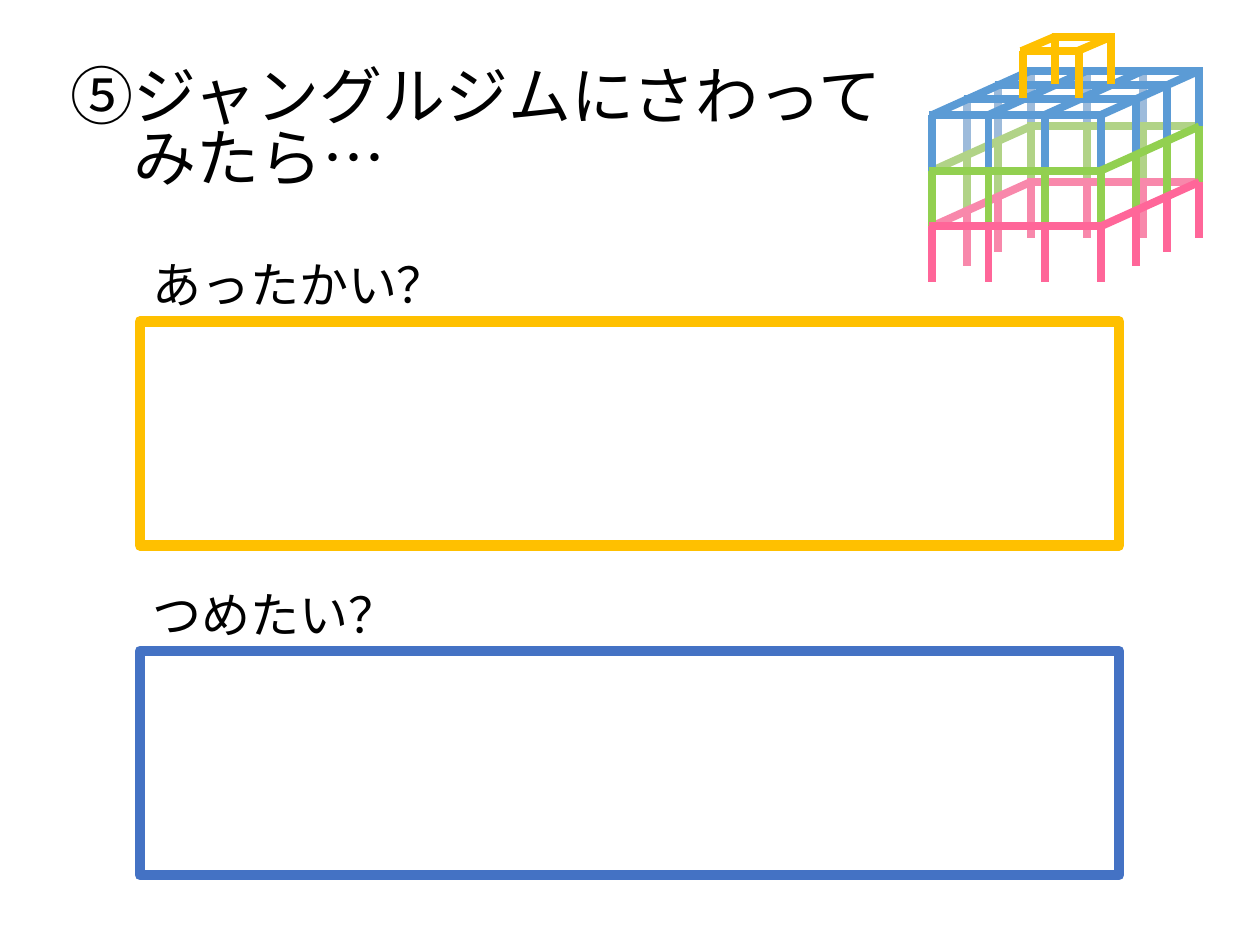
import pptx
import pptx.util
import pptx.dml.color
import pptx.enum.shapes
import pptx.enum.text
import pptx.oxml
import pptx.oxml.ns
from dataclasses import dataclass

Pt = pptx.util.Pt


@dataclass(frozen=True)
class Theme:
    font: str = "Noto Sans CJK JP"
    head: int = 36
    label: int = 28
    ink: str = "000000"
    paper: str = "FFFFFF"
    warm: str = "FFC000"
    cool: str = "4472C4"
    near: tuple = ("5B9BD5", "92D050", "FF6699")  # top tier first
    far: tuple = ("9DBBDB", "B1D387", "F888AB")
    bar: float = 4.5
    frame: float = 6


def color(code):
    return pptx.dml.color.RGBColor.from_string(code)


def write(frame, text, font, size, ink, gap=1.0):
    """Fill a text frame, one paragraph per line of text."""
    frame.text = text
    for par in frame.paragraphs:
        par.alignment = pptx.enum.text.PP_ALIGN.LEFT
        par.line_spacing = gap
        for run in par.runs:
            run.font.name = font
            run.font.size = Pt(size)
            run.font.color.rgb = color(ink)
            east = pptx.oxml.parse_xml(
                f'<a:ea {pptx.oxml.ns.nsdecls("a")} typeface="{font}"/>')
            run.font._element.find(pptx.oxml.ns.qn("a:latin")).addnext(east)


class Deck:
    def __init__(self, theme):
        self.theme = theme
        self.show = pptx.Presentation()
        self.show.slide_width, self.show.slide_height = Pt(720), Pt(540)
        self.slide = self.show.slides.add_slide(self.show.slide_layouts[5])

    def title(self, text, x, y, w, h):
        box = self.slide.shapes.title
        box.left, box.top, box.width, box.height = map(Pt, (x, y, w, h))
        frame = box.text_frame
        frame.vertical_anchor = pptx.enum.text.MSO_ANCHOR.MIDDLE
        write(frame, text, self.theme.font, self.theme.head,
              self.theme.ink, gap=0.82)

    def label(self, text, x, y, w, h):
        box = self.slide.shapes.add_textbox(*map(Pt, (x, y, w, h)))
        frame = box.text_frame
        frame.word_wrap = False
        frame.auto_size = pptx.enum.text.MSO_AUTO_SIZE.SHAPE_TO_FIT_TEXT
        write(frame, text, self.theme.font, self.theme.label, self.theme.ink)

    def frame(self, line, x, y, w, h):
        rect = self.slide.shapes.add_shape(
            pptx.enum.shapes.MSO_SHAPE.RECTANGLE, *map(Pt, (x, y, w, h)))
        rect.shadow.inherit = False
        rect.fill.solid()
        rect.fill.fore_color.rgb = color(self.theme.paper)
        rect.line.color.rgb = color(line)
        rect.line.width = Pt(self.theme.frame)

    def group(self):
        return self.slide.shapes.add_group_shape()

    def bar(self, group, start, end, ink):
        line = group.shapes.add_connector(
            pptx.enum.shapes.MSO_CONNECTOR.STRAIGHT, *map(Pt, start + end))
        line.line.color.rgb = color(ink)
        line.line.width = Pt(self.theme.bar)
        line._element.spPr.append(pptx.oxml.parse_xml(
            f'<a:effectLst {pptx.oxml.ns.nsdecls("a")}/>'))


STEP, TIER, OVER = 32.1, 31.8, 2
DEPTH = ((0, 0), (20, -9.2), (37.6, -17.2), (56.2, -25.3))


def gym(deck):
    """Three tiers of bars on a 3 by 3 grid, with a small cube on top."""
    near, far, warm = deck.theme.near, deck.theme.far, deck.theme.warm
    group = deck.group()

    def point(col, row, tier=0):
        dx, dy = DEPTH[row]
        return 532.8 + STEP * col + dx, 65.7 + dy + TIER * tier

    def post(col, row, inks):
        for tier, ink in enumerate(inks):
            deck.bar(group, point(col, row, tier),
                     point(col, row, tier + 1), ink)

    def rail(row, tier, ink):
        (x1, y1), (x2, y2) = point(0, row, tier), point(3, row, tier)
        deck.bar(group, (x1 - OVER, y1), (x2 + OVER, y2), ink)

    def side(col, tier, ink):
        deck.bar(group, point(col, 3, tier), point(col, 0, tier), ink)

    # Far posts and rails
    for col, row in ((2, 3), (1, 3), (0, 3), (0, 2), (0, 1)):
        post(col, row, far)
    for tier in (1, 2):
        side(0, tier, far[tier])
        rail(3, tier, far[tier])

    # Top grid
    post(3, 3, near)
    for row in range(4):
        rail(row, 0, near[0])
    for col in range(4):
        side(col, 0, near[0])

    # Near posts and rails
    for col, row in ((0, 0), (1, 0), (2, 0), (3, 0), (3, 1), (3, 2)):
        post(col, row, near)
    for tier in (2, 1):
        rail(0, tier, near[tier])
        side(3, tier, near[tier])

    # Cube
    left, top, tall, dx, dy = 584.6, 29.2, 27, 18.4, -8.3
    for x, y in ((left, top), (left + dx, top + dy)):
        for foot in (x, x + STEP):
            deck.bar(group, (foot, y), (foot, y + tall), warm)
        deck.bar(group, (x - OVER, y), (x + STEP + OVER, y), warm)
    for x in (left, left + STEP):
        deck.bar(group, (x - 1, top), (x + dx, top + dy), warm)


def main():
    theme = Theme()
    deck = Deck(theme)
    deck.title("⑤ジャングルジムにさわって\n　みたら…", 33, 28, 654, 94.5)
    gym(deck)

    # Answer boxes
    rows = (("あったかい？", theme.warm, 142, 184.3),
            ("つめたい？", theme.cool, 330.3, 156.2))
    for text, ink, y, wide in rows:
        deck.frame(ink, 80, y + 41.6, 559.5, 128.2)
        deck.label(text, 80, y, wide, 41)
    deck.show.save("out.pptx")


if __name__ == "__main__":
    main()
